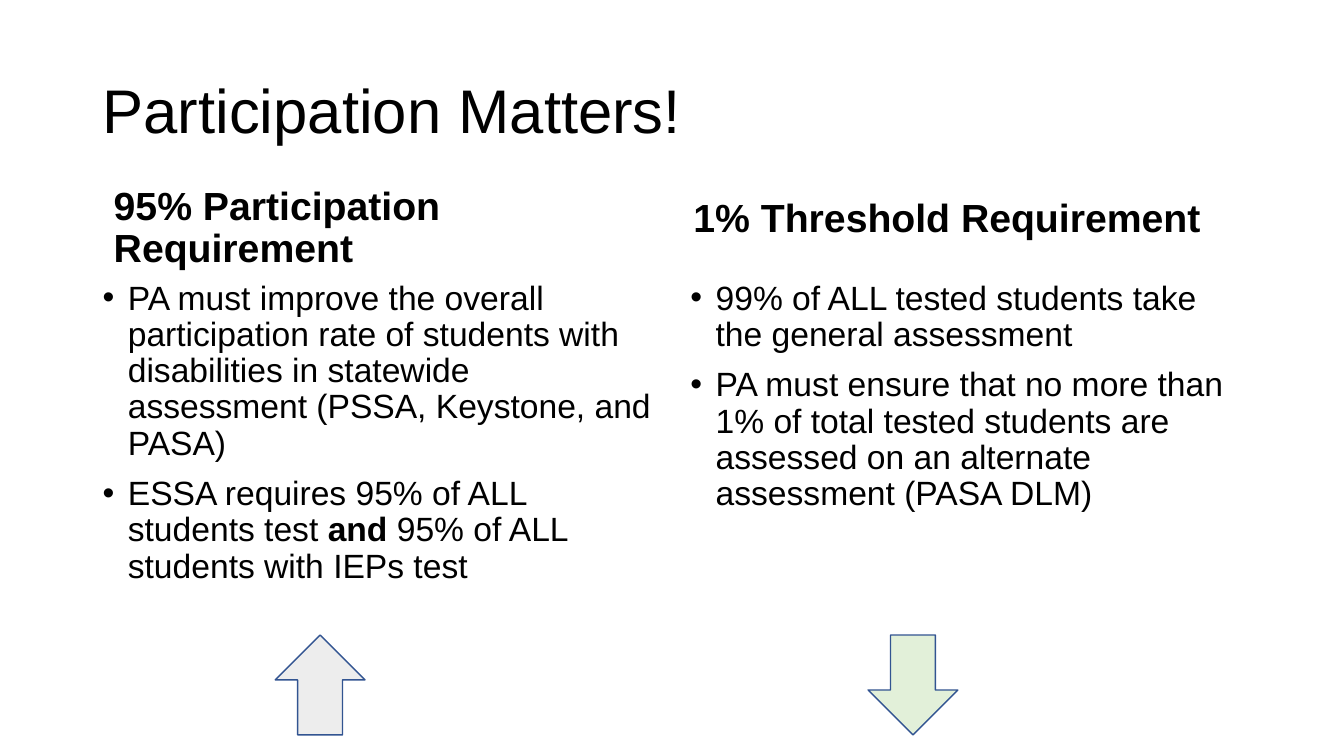
"""Build the slide comparing the 95% participation and 1% threshold requirements."""
from lxml.etree import SubElement
from pptx import Presentation
from pptx.dml.color import RGBColor
from pptx.enum.shapes import MSO_SHAPE
from pptx.enum.text import MSO_ANCHOR
from pptx.oxml.ns import qn
from pptx.util import Emu, Pt

PX = 9144
BLACK = RGBColor(0x00, 0x00, 0x00)
GREY = RGBColor(0xED, 0xED, 0xED)
GREEN = RGBColor(0xE2, 0xF0, 0xD9)
BLUE = RGBColor(0x32, 0x54, 0x91)


def add_text(box, paragraphs, size, anchor=MSO_ANCHOR.TOP, bold=False, bullet=False):
    """Write paragraphs, each a list of runs in which every second run is emphasised."""
    frame = slide.shapes.add_textbox(*[Emu(n * PX) for n in box]).text_frame
    frame.word_wrap = True
    frame.vertical_anchor = anchor
    for index, runs in enumerate(paragraphs):
        paragraph = frame.paragraphs[0] if index == 0 else frame.add_paragraph()
        paragraph.line_spacing = 0.9
        if index:
            paragraph.space_before = Pt(10)
        if bullet:
            properties = paragraph._p.get_or_add_pPr()
            properties.set("marL", str(25 * PX))
            properties.set("indent", str(-25 * PX))
            SubElement(properties, qn("a:buFont")).set("typeface", "Arial")
            SubElement(properties, qn("a:buChar")).set("char", "•")
        for position, words in enumerate(runs):
            run = paragraph.add_run()
            run.text = words
            run.font.name = "Arial"
            run.font.size = Pt(size)
            run.font.bold = bold or position % 2 == 1
            run.font.color.rgb = BLACK


presentation = Presentation()
presentation.slide_width = Emu(1333 * PX)
presentation.slide_height = Emu(750 * PX)
slide = presentation.slides.add_slide(presentation.slide_layouts[6])

add_text((92, 40, 1150, 145), [["Participation Matters!"]], 44, anchor=MSO_ANCHOR.MIDDLE)

requirements = [
    ("95% Participation Requirement", (103, 184, 564, 90), (92, 274, 564, 403), [
        ["PA must improve the overall participation rate of students with disabilities "
         "in statewide assessment (PSSA, Keystone, and PASA)"],
        ["ESSA requires 95% of ALL students test ", "and", " 95% of ALL students with IEPs test"],
    ], MSO_SHAPE.UP_ARROW, 273, GREY),
    ("1% Threshold Requirement", (678, 154, 567, 90), (675, 274, 567, 403), [
        ["99% of ALL tested students take the general assessment"],
        ["PA must ensure that no more than 1% of total tested students are assessed "
         "on an alternate assessment (PASA DLM)"],
    ], MSO_SHAPE.DOWN_ARROW, 861, GREEN),
]
for heading, heading_box, points_box, points, direction, arrow_left, arrow_color in requirements:
    add_text(heading_box, [[heading]], 28, anchor=MSO_ANCHOR.BOTTOM, bold=True)
    add_text(points_box, points, 24, bullet=True)
    arrow = slide.shapes.add_shape(
        direction, *[Emu(n * PX) for n in (arrow_left, 630, 89, 99)])
    arrow.shadow.inherit = False
    arrow.fill.solid()
    arrow.fill.fore_color.rgb = arrow_color
    arrow.line.color.rgb = BLUE
    arrow.line.width = Pt(1)

presentation.save("out.pptx")
